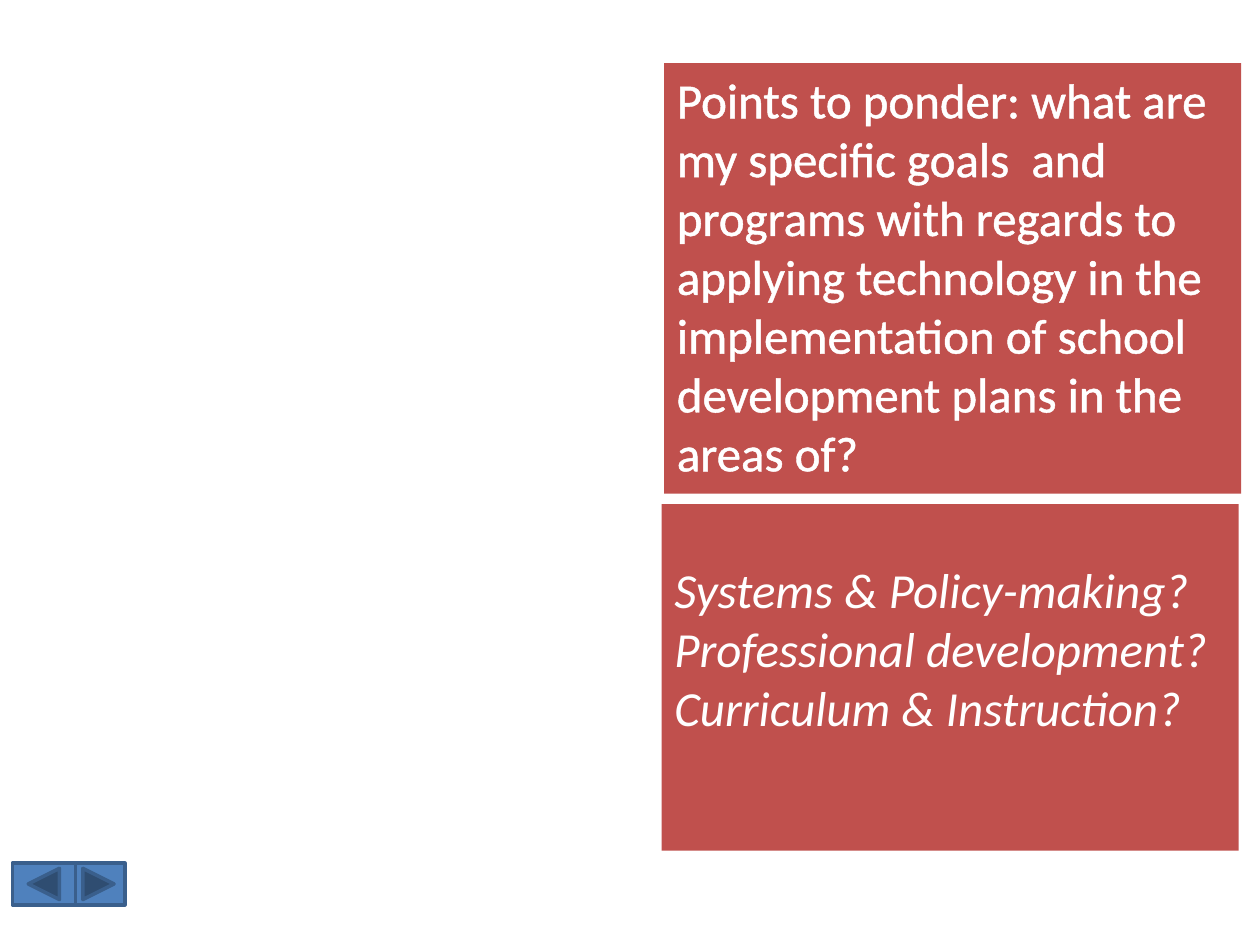
from lxml.etree import SubElement
from pptx import Presentation
from pptx.dml.color import RGBColor
from pptx.enum.shapes import MSO_SHAPE
from pptx.enum.text import MSO_ANCHOR, MSO_AUTO_SIZE, PP_ALIGN
from pptx.oxml.ns import qn
from pptx.util import Cm, Pt

COLORS = {"panel": "C0504D", "text": "FFFFFF", "button": "4F81BD", "border": "3A5F8C"}


class SlideBuilder:
    """Holds the style and the current slide, and adds its elements."""

    font_name = "Calibri"
    font_size = Pt(28)

    def __init__(self, presentation):
        layout = presentation.slide_layouts.get_by_name("Title and Content")
        self.slide = presentation.slides.add_slide(layout)

    def color(self, name):
        return RGBColor.from_string(COLORS[name])

    def fill(self, shape, name):
        shape.fill.solid()
        shape.fill.fore_color.rgb = self.color(name)

    def panel(self, shape, box, lines, anchor, italic=False):
        shape.left, shape.top, shape.width, shape.height = map(Cm, box)
        self.fill(shape, "panel")
        frame = shape.text_frame
        frame.text = "\n".join(lines)
        frame.word_wrap = True
        frame.auto_size = MSO_AUTO_SIZE.NONE
        frame.vertical_anchor = anchor
        for paragraph in frame.paragraphs:
            properties = paragraph._p.get_or_add_pPr()
            properties.set("marL", "0")
            properties.set("indent", "0")
            SubElement(properties, qn("a:buNone"))
            paragraph.alignment = PP_ALIGN.LEFT
            paragraph.space_before = Pt(0)
            font = paragraph.font
            font.name = self.font_name
            font.size = self.font_size
            font.italic = italic
            font.color.rgb = self.color("text")
        return frame

    def outline_text(self, frame, width):
        for paragraph in frame.paragraphs:
            for run in paragraph.runs:
                properties = run._r.get_or_add_rPr()
                line = SubElement(properties, qn("a:ln"), w=str(width))
                fill = SubElement(line, qn("a:solidFill"))
                SubElement(fill, qn("a:srgbClr"), val=COLORS["text"])

    def button(self, kind, left, width):
        shape = self.slide.shapes.add_shape(kind, Cm(left), Cm(17.4), Cm(width), Cm(0.84))
        shape.shadow.inherit = False
        self.fill(shape, "button")
        shape.line.color.rgb = self.color("border")
        shape.line.width = Pt(2)


def main():
    presentation = Presentation()
    presentation.slide_width = Cm(25.4)
    presentation.slide_height = Cm(19.05)
    builder = SlideBuilder(presentation)
    title, body = builder.slide.placeholders

    question = builder.panel(
        title, (13.39, 1.27, 11.63, 8.68),
        ["Points to ponder: what are my specific goals  and programs with regards to "
         "applying technology in the implementation of school development plans in the areas of?"],
        MSO_ANCHOR.TOP)
    builder.outline_text(question, Pt(1.45))

    areas = builder.panel(
        body, (13.34, 10.16, 11.63, 6.99),
        ["Systems & Policy-making?", "Professional development?", "Curriculum & Instruction?"],
        MSO_ANCHOR.MIDDLE, italic=True)
    areas.margin_bottom = Cm(1.32)

    builder.button(MSO_SHAPE.ACTION_BUTTON_FORWARD_OR_NEXT, 1.45, 1.07)
    builder.button(MSO_SHAPE.ACTION_BUTTON_BACK_OR_PREVIOUS, 0.25, 1.27)
    presentation.save("out.pptx")


if __name__ == "__main__":
    main()
